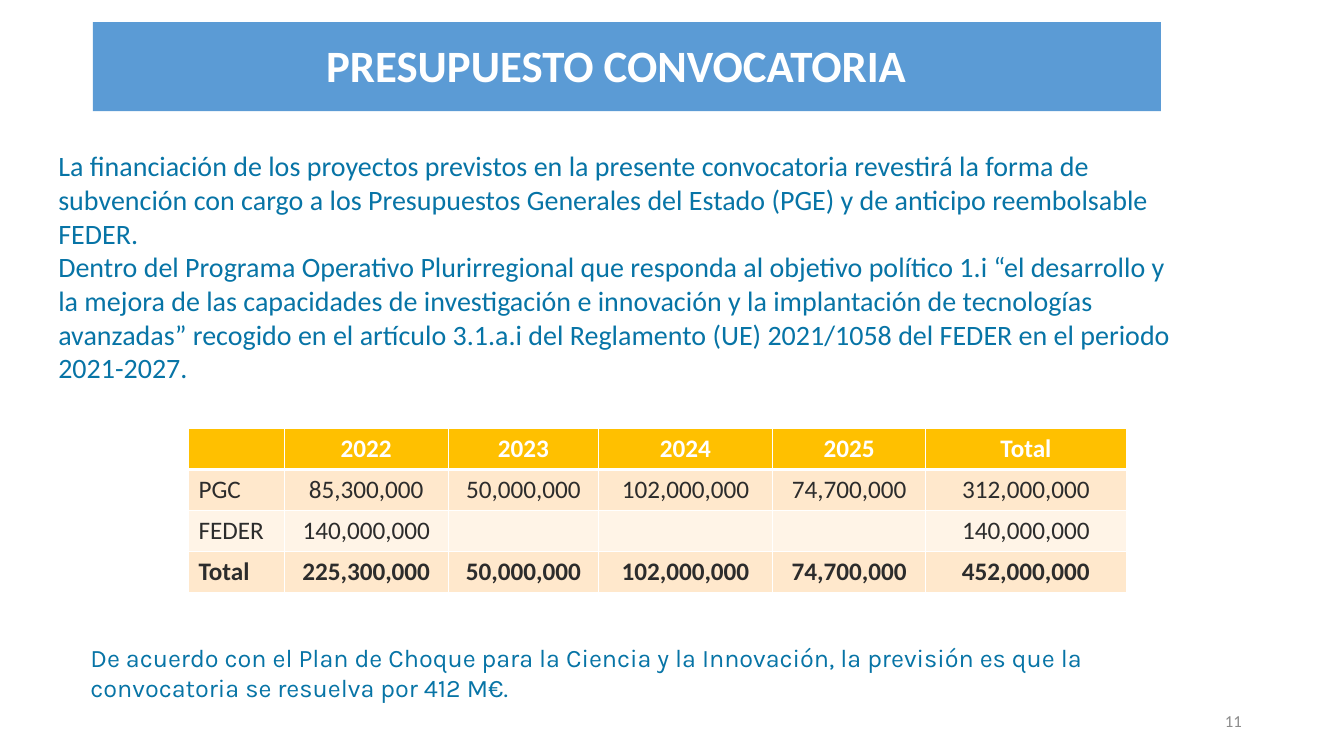
import pptx
import pptx.util
import pptx.dml.color
import pptx.enum.shapes
import pptx.enum.text
import pptx.oxml
import pptx.oxml.ns

Cm, Pt = pptx.util.Cm, pptx.util.Pt
ALIGN = pptx.enum.text.PP_ALIGN
ANCHOR = pptx.enum.text.MSO_ANCHOR

COLORS = {
    "bar": "5B9BD5", "white": "FFFFFF", "blue": "0774A6", "grey": "8C8C8C",
    "dark": "2C2C2C", "header": "FFC000", "odd": "FFE8CC", "even": "FFF4E7",
}

BODY = [
    "La financiación de los proyectos previstos en la presente convocatoria revestirá "
    "la forma de subvención con cargo a los Presupuestos Generales del Estado (PGE) "
    "y de anticipo reembolsable FEDER.",
    "Dentro del Programa Operativo Plurirregional que responda al objetivo político 1.i "
    "“el desarrollo y la mejora de las capacidades de investigación e innovación y la "
    "implantación de tecnologías avanzadas” recogido en el artículo 3.1.a.i del "
    "Reglamento (UE) 2021/1058 del FEDER en el periodo 2021-2027.",
]
NOTE = ("De acuerdo con el Plan de Choque para la Ciencia y la Innovación, la previsión "
        "es que la convocatoria se resuelva por 412 M€.")
BUDGET = [
    ["", "2022", "2023", "2024", "2025", "Total"],
    ["PGC", "85,300,000", "50,000,000", "102,000,000", "74,700,000", "312,000,000"],
    ["FEDER", "140,000,000", "", "", "", "140,000,000"],
    ["Total", "225,300,000", "50,000,000", "102,000,000", "74,700,000", "452,000,000"],
]
COL_WIDTHS = [2.41, 4.14, 3.78, 4.39, 3.86, 5.05]
ROW_HEIGHT = 1.03


def rgb(name):
    return pptx.dml.color.RGBColor.from_string(COLORS[name])


def write(p, text, size=18, color="blue", font="Calibri", bold=False,
          align=ALIGN.LEFT, spacing=None):
    p.alignment = align
    if spacing:
        p.line_spacing = spacing
    if text:
        r = p.add_run()
        r.text = text
        r.font.size = Pt(size)
        r.font.name = font
        r.font.bold = bold
        r.font.color.rgb = rgb(color)


def add_bar(s, x, y, w, h):
    sp = s.shapes.add_shape(pptx.enum.shapes.MSO_SHAPE.RECTANGLE,
                            Cm(x), Cm(y), Cm(w), Cm(h))
    sp.shadow.inherit = False
    sp.fill.solid()
    sp.fill.fore_color.rgb = rgb("bar")
    sp.line.fill.background()


def add_text(s, x, y, w, h, paragraphs, anchor=ANCHOR.TOP, **fmt):
    tf = s.shapes.add_textbox(Cm(x), Cm(y), Cm(w), Cm(h)).text_frame
    tf.word_wrap = True
    tf.vertical_anchor = anchor
    for i, text in enumerate(paragraphs):
        p = tf.add_paragraph() if i else tf.paragraphs[0]
        write(p, text, **fmt)


def set_borders(cell, widths):
    """Draw white borders; widths maps each side (L, R, T, B) to points."""
    tc_pr = cell._tc.get_or_add_tcPr()
    for i, (side, width) in enumerate(widths.items()):
        tc_pr.insert(i, pptx.oxml.parse_xml(
            f'<a:ln{side} {pptx.oxml.ns.nsdecls("a")} w="{Pt(width)}"><a:solidFill>'
            f'<a:srgbClr val="{COLORS["white"]}"/></a:solidFill></a:ln{side}>'))


def add_table(s, x, y, rows, col_widths, row_height):
    table = s.shapes.add_table(len(rows), len(col_widths), Cm(x), Cm(y),
                               Cm(sum(col_widths)), Cm(row_height * len(rows))).table
    for column, width in zip(table.columns, col_widths):
        column.width = Cm(width)
    last = len(rows) - 1
    for i, row in enumerate(rows):
        fill = "header" if i == 0 else "odd" if i % 2 else "even"
        for j, text in enumerate(row):
            cell = table.cell(i, j)
            cell.fill.solid()
            cell.fill.fore_color.rgb = rgb(fill)
            set_borders(cell, {"L": 1, "R": 1, "T": 3 if i == 1 else 1,
                               "B": 3 if i == 0 else 1})
            write(cell.text_frame.paragraphs[0], text,
                  color="dark" if i else "white", bold=i in (0, last),
                  align=ALIGN.CENTER if j or i == 0 else ALIGN.LEFT)


def main():
    prs = pptx.Presentation()
    prs.slide_width, prs.slide_height = Cm(33.87), Cm(19.05)
    s = prs.slides.add_slide(prs.slide_layouts[6])

    # Title bar and page number
    add_bar(s, 2.34, 0.56, 26.92, 2.24)
    add_text(s, 23.93, 17.65, 7.62, 1.02, ["11"], anchor=ANCHOR.MIDDLE,
             size=12, color="grey", align=ALIGN.RIGHT)
    add_text(s, 0.81, 1.04, 29.44, 1.68, ["PRESUPUESTO CONVOCATORIA"], size=32,
             color="white", bold=True, align=ALIGN.CENTER, spacing=0.85)

    # Funding text, budget table and closing note
    add_text(s, 1.22, 3.63, 28.63, 6.25, BODY, size=20)
    add_table(s, 4.75, 10.8, BUDGET, COL_WIDTHS, ROW_HEIGHT)
    add_text(s, 2.03, 16.05, 27.3, 1.8, [NOTE], font="Karla")

    prs.save("out.pptx")


if __name__ == "__main__":
    main()
